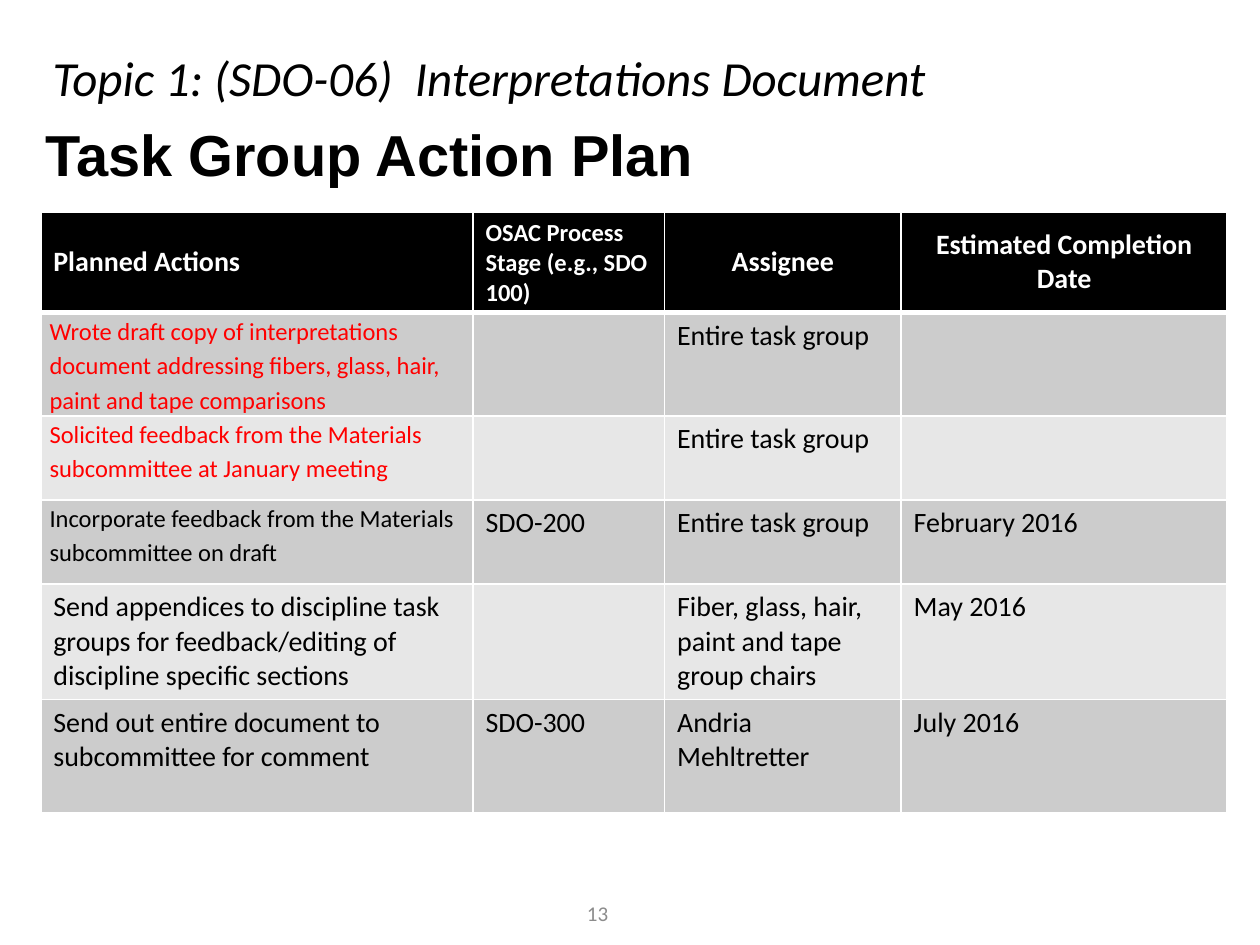
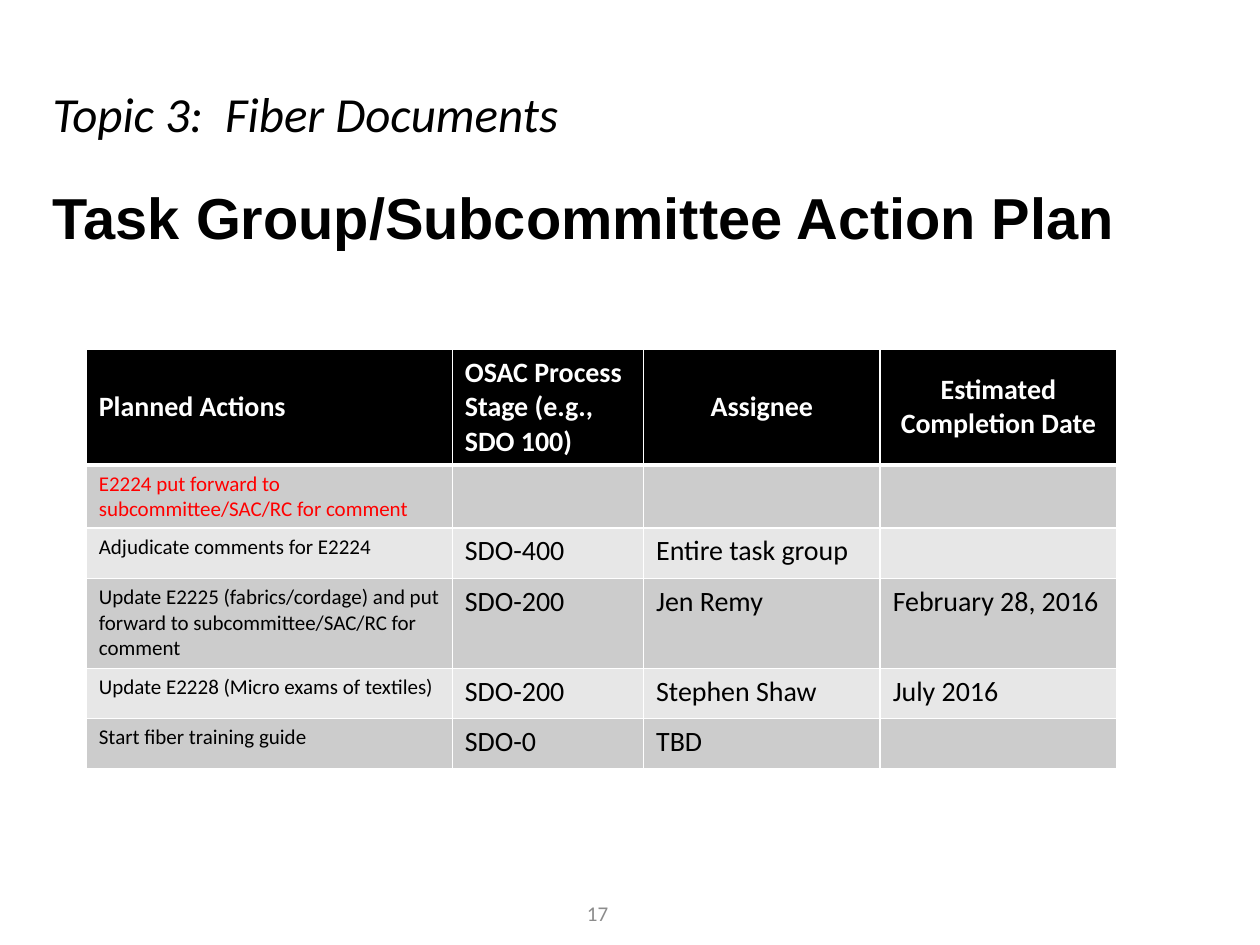
import pptx
import pptx.dml.color
import pptx.enum.text
import pptx.util
from lxml import etree
from pptx.oxml.ns import qn

Pt = pptx.util.Pt
ALIGN = pptx.enum.text.PP_ALIGN
ANCHOR = pptx.enum.text.MSO_ANCHOR

# Shared style
BLACK, WHITE, RED, GREY = "000000", "FFFFFF", "FF0000", "8C8C8C"
BANDS = ("CCCCCC", "E7E7E7")
HEADING_FONT, BODY_FONT = "Arial", "Calibri"
HEADERS = ("Planned Actions", "OSAC Process Stage (e.g., SDO 100)",
           "Assignee", "Estimated Completion Date")


def rgb(value):
    return pptx.dml.color.RGBColor.from_string(value)


def write(tf, text, size=16, color=BLACK, font=BODY_FONT, bold=False,
          italic=False, align=ALIGN.LEFT, spacing=1.0):
    """Put one formatted paragraph into a text frame."""
    p = tf.paragraphs[0]
    p.alignment = align
    p.line_spacing = spacing
    r = p.add_run()
    r.text = text
    r.font.name = font
    r.font.size = Pt(size)
    r.font.bold = bold
    r.font.italic = italic
    r.font.color.rgb = rgb(color)


def set_borders(cell, **widths):
    """Draw white cell edges; keys are L, R, T and B, widths are in points."""
    tc_pr = cell._tc.get_or_add_tcPr()
    for i, (side, width) in enumerate(widths.items()):
        ln = etree.Element(qn(f"a:ln{side}"), w=str(Pt(width)))
        fill = etree.SubElement(ln, qn("a:solidFill"))
        etree.SubElement(fill, qn("a:srgbClr"), val=WHITE)
        tc_pr.insert(i, ln)


class Deck:
    def __init__(self):
        self.prs = pptx.Presentation()
        self.prs.slide_width, self.prs.slide_height = Pt(720), Pt(540)
        self.s = None

    def slide(self, number):
        self.s = self.prs.slides.add_slide(self.prs.slide_layouts[5])
        self.text(str(number), 260.5, 507.5, 162, 29, size=12, color=GREY,
                  align=ALIGN.CENTER, anchor=ANCHOR.MIDDLE)

    def title(self, text, left, top, width, height=104.5):
        sp = self.s.shapes.title
        sp.left, sp.top, sp.width, sp.height = map(Pt, (left, top, width, height))
        tf = sp.text_frame
        tf.auto_size = pptx.enum.text.MSO_AUTO_SIZE.NONE
        tf.vertical_anchor = ANCHOR.MIDDLE
        write(tf, text, size=33, font=HEADING_FONT, bold=True, spacing=0.9)

    def text(self, text, left, top, width, height, anchor=ANCHOR.TOP, **style):
        sp = self.s.shapes.add_textbox(*map(Pt, (left, top, width, height)))
        tf = sp.text_frame
        tf.word_wrap = True
        tf.vertical_anchor = anchor
        write(tf, text, **style)

    def topic(self, text, top, width):
        self.text(text, 23, top, width, 41, size=28, italic=True)

    def plan(self, left, top, widths, heights, actions, stage_size=16,
             action_size=12, done=1, tight=0):
        """Action table: the first `done` actions are red, and the first
        `tight` ones sit in cells with narrow margins and looser lines."""
        table = self.s.shapes.add_table(
            len(actions) + 1, len(widths), Pt(left), Pt(top),
            Pt(sum(widths)), Pt(sum(heights))).table
        for column, width in zip(table.columns, widths):
            column.width = Pt(width)
        for row, height in zip(table.rows, heights):
            row.height = Pt(height)

        # Header row
        for c, header in enumerate(HEADERS):
            cell = self.fill_cell(table.cell(0, c), BLACK, top=1, bottom=3)
            cell.vertical_anchor = ANCHOR.MIDDLE
            write(cell.text_frame, header, size=stage_size if c == 1 else 16,
                  color=WHITE, bold=True,
                  align=ALIGN.CENTER if c > 1 else ALIGN.LEFT)

        # Banded action rows
        for i, action in enumerate(actions):
            for c, text in enumerate(action):
                cell = self.fill_cell(table.cell(i + 1, c), BANDS[i % 2],
                                      top=1 if i else 3, bottom=1)
                style = {}
                if c == 0:
                    style["color"] = RED if i < done else BLACK
                    if i < tight or not tight:
                        style["size"] = action_size
                    if i < tight:
                        style["spacing"] = 1.15
                        cell.margin_left = cell.margin_right = Pt(5)
                        cell.margin_top = cell.margin_bottom = Pt(0)
                if text:
                    write(cell.text_frame, text, **style)

    def fill_cell(self, cell, color, top, bottom):
        cell.fill.solid()
        cell.fill.fore_color.rgb = rgb(color)
        set_borders(cell, L=1, R=1, T=top, B=bottom)
        return cell


def main():
    deck = Deck()

    # Interpretations document
    deck.slide(13)
    deck.title("Task Group Action Plan", 18.7, 38, 620.6)
    deck.plan(
        23.3, 121, (247, 109.5, 135.2, 186.3), (57.5, 59, 48, 48, 66, 65),
        [("Wrote draft copy of interpretations document addressing fibers, "
          "glass, hair, paint and tape comparisons", "", "Entire task group", ""),
         ("Solicited feedback from the Materials subcommittee at January meeting",
          "", "Entire task group", ""),
         ("Incorporate feedback from the Materials subcommittee on draft",
          "SDO-200", "Entire task group", "February 2016"),
         ("Send appendices to discipline task groups for feedback/editing of "
          "discipline specific sections", "",
          "Fiber, glass, hair, paint and tape group chairs", "May 2016"),
         ("Send out entire document to subcommittee for comment",
          "SDO-300", "Andria Mehltretter", "July 2016")],
        stage_size=14, action_size=14, done=2, tight=3)
    deck.topic("Topic 1: (SDO-06)  Interpretations Document", 23.8, 600)

    # Fiber documents
    deck.slide(17)
    deck.plan(
        49.3, 199.7, (209.2, 109.3, 135.2, 135.2), (66, 36, 28.5, 51.5, 28.5, 28.5),
        [("E2224 put forward to subcommittee/SAC/RC for comment", "", "", ""),
         ("Adjudicate comments for E2224", "SDO-400", "Entire task group", ""),
         ("Update E2225 (fabrics/cordage) and put forward to "
          "subcommittee/SAC/RC for comment",
          "SDO-200", "Jen Remy", "February 28, 2016"),
         ("Update E2228 (Micro exams of textiles)",
          "SDO-200", "Stephen Shaw", "July 2016"),
         ("Start fiber training guide", "SDO-0", "TBD", "")])
    deck.topic("Topic 3:  Fiber Documents", 44, 529)
    deck.title("Task Group/Subcommittee Action Plan", 23, 74, 697)

    deck.prs.save("out.pptx")


if __name__ == "__main__":
    main()
